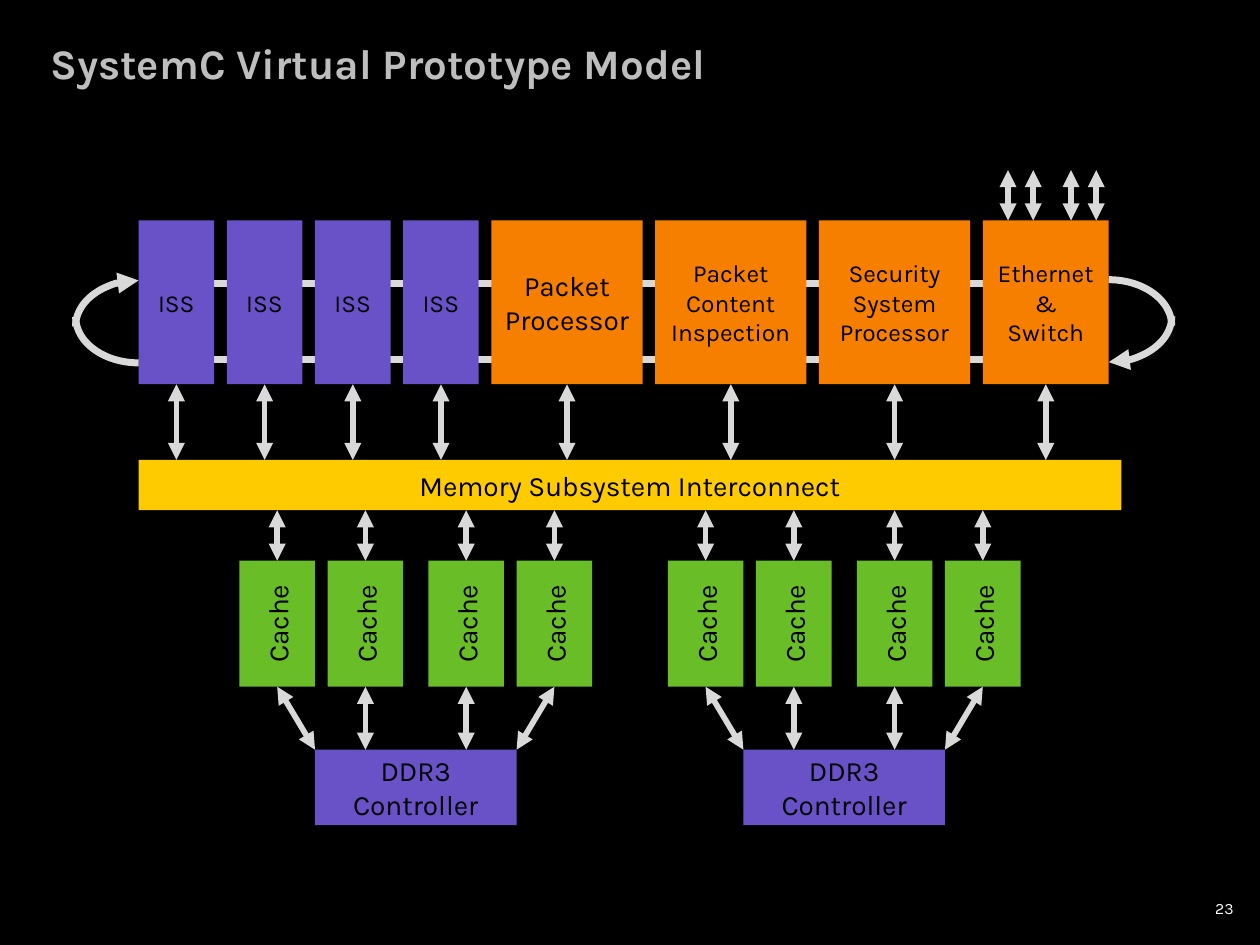
from collections import namedtuple

from pptx import Presentation
from pptx.dml.color import RGBColor
from pptx.enum import shapes, text
from pptx.oxml import ns, xmlchemy
from pptx.util import Cm, Pt

FONT = "Karla"
COLORS = {
    "background": "000000",
    "title": "BEBEBE",
    "number": "FFFFFF",
    "label": "000000",
    "arrow": "D9D9D9",
    "core": "6952C7",
    "engine": "F77F00",
    "interconnect": "FECB00",
    "cache": "69BE28",
}

# Boxes are measured in steps of a tenth of an inch
Box = namedtuple("Box", "left top width height")


def grid(steps):
    return Cm(steps * 2.54 / 10)


def color(name):
    return RGBColor.from_string(COLORS[name])


def write(frame, lines, size, ink, align, bold=False):
    for index, line in enumerate(lines):
        para = frame.paragraphs[0] if index == 0 else frame.add_paragraph()
        para.alignment = align
        span = para.add_run()
        span.text = line
        span.font.name = FONT
        span.font.size = Pt(size)
        span.font.bold = bold
        span.font.color.rgb = color(ink)


def add_block(page, box, fill, lines, size, rotation=0):
    """Filled rectangle; box is the area before rotation."""
    block = page.shapes.add_shape(shapes.MSO_SHAPE.RECTANGLE, *map(grid, box))
    block.rotation = rotation
    block.shadow.inherit = False
    block.fill.solid()
    block.fill.fore_color.rgb = color(fill)
    block.line.fill.background()
    frame = block.text_frame
    frame.word_wrap = True
    frame.vertical_anchor = text.MSO_ANCHOR.MIDDLE
    write(frame, lines, size, "label", text.PP_ALIGN.CENTER)


def style_line(shape, width, ends):
    shape.line.color.rgb = color("arrow")
    shape.line.width = Pt(width)
    outline = shape.element.spPr.find(ns.qn("a:ln"))
    for end in ends:
        head = xmlchemy.OxmlElement(f"a:{end}")
        head.set("type", "triangle")
        outline.append(head)


def add_arrow(page, start, end, width=3.25):
    """Line with an arrowhead at both ends."""
    arrow = page.shapes.add_connector(
        shapes.MSO_CONNECTOR.STRAIGHT, *map(grid, start + end))
    style_line(arrow, width, ["headEnd", "tailEnd"])
    arrow.element.spPr.append(xmlchemy.OxmlElement("a:effectLst"))


def add_title(page, box, words):
    title = page.shapes.title
    title.left, title.top, title.width, title.height = map(grid, box)
    frame = title.text_frame
    frame.auto_size = text.MSO_AUTO_SIZE.NONE
    frame.vertical_anchor = text.MSO_ANCHOR.TOP
    write(frame, [words], 24, "title", text.PP_ALIGN.LEFT, bold=True)


def add_page_number(page, box, number):
    frame = page.shapes.add_textbox(*map(grid, box)).text_frame
    frame.word_wrap = True
    frame.margin_right = 0
    write(frame, [number], 9, "number", text.PP_ALIGN.RIGHT)


def add_engine_row(page, box, bus_gap):
    """Processing engines on a two-lane ring, each linked to the bus below."""
    for lane in (5, 11):
        y = box.top + lane
        add_arrow(page, (box.left, y), (box.left + box.width - 1, y), 4)

    engines = [(6, "core", ["ISS"], 14)] * 4 + [
        (12, "engine", ["Packet Processor"], 16),
        (12, "engine", ["Packet", "Content", "Inspection"], 14),
        (12, "engine", ["Security", "System", "Processor"], 14),
        (10, "engine", ["Ethernet", "&", "Switch"], 14),
    ]
    left, bottom = box.left, box.top + box.height
    for width, fill, lines, size in engines:
        add_block(page, Box(left, box.top, width, box.height), fill, lines, size)
        center = left + width / 2
        add_arrow(page, (center, bottom), (center, bottom + bus_gap))
        left += width + 1

    # Network ports above the Ethernet switch
    for offset in (8, 6, 3, 1):
        x = box.left + box.width - offset
        add_arrow(page, (x, box.top - 4), (x, box.top))


def add_return_loop(page, box, turn, shift):
    """Half ellipse of two quarter arcs that closes the ring at one end."""
    middle_x = box.left + box.width / 2
    middle_y = box.top + box.height / 2 + shift
    upright = Box(middle_x - box.height / 2, middle_y - box.width / 2,
                  box.height, box.width)
    for area, rotation, ends in ((upright, turn + 90, ["tailEnd"]),
                                 (box, turn, [])):
        arc = page.shapes.add_shape(shapes.MSO_SHAPE.ARC, *map(grid, area))
        arc.rotation = rotation
        arc.shadow.inherit = False
        arc.fill.background()
        style_line(arc, 4, ends)


def add_memory_bank(page, box):
    """Four caches feeding one memory controller."""
    cache_width, cache_height, link, controller_height = 6, 10, 5, 6
    cache_bottom = box.top + cache_height
    controller = Box(box.left + 6, cache_bottom + link,
                     box.width - 12, controller_height)
    add_block(page, controller, "core", ["DDR3", "Controller"], 16)
    for offset in (0, 7, 15, 22):
        center = box.left + offset + cache_width / 2
        cache = Box(center - cache_height / 2,
                    box.top + (cache_height - cache_width) / 2,
                    cache_height, cache_width)
        add_block(page, cache, "cache", ["Cache"], 16, rotation=270)
        add_arrow(page, (center, box.top - 4), (center, box.top))
        # Outer links end at the controller's corners
        target = min(max(center, controller.left),
                     controller.left + controller.width)
        add_arrow(page, (center, cache_bottom), (target, controller.top))


def main():
    deck = Presentation()
    deck.slide_width, deck.slide_height = grid(100), grid(75)
    page = deck.slides.add_slide(deck.slide_layouts[5])
    page.background.fill.solid()
    page.background.fill.fore_color.rgb = color("background")

    add_title(page, Box(3, 2.5, 90, 9.2), "SystemC Virtual Prototype Model")
    add_engine_row(page, Box(11, 17.5, 77, 13), bus_gap=6)
    add_return_loop(page, Box(83, 22.2, 10, 7.3), turn=0, shift=-0.75)
    add_return_loop(page, Box(6, 21.5, 10, 7.3), turn=180, shift=0.75)
    add_block(page, Box(11, 36.5, 78, 4), "interconnect",
              ["Memory Subsystem Interconnect"], 16)
    for left in (19, 53):
        add_memory_bank(page, Box(left, 44.5, 28, 21))
    add_page_number(page, Box(94.4, 70.8, 3.5, 2.5), "23")

    deck.save("out.pptx")


if __name__ == "__main__":
    main()
